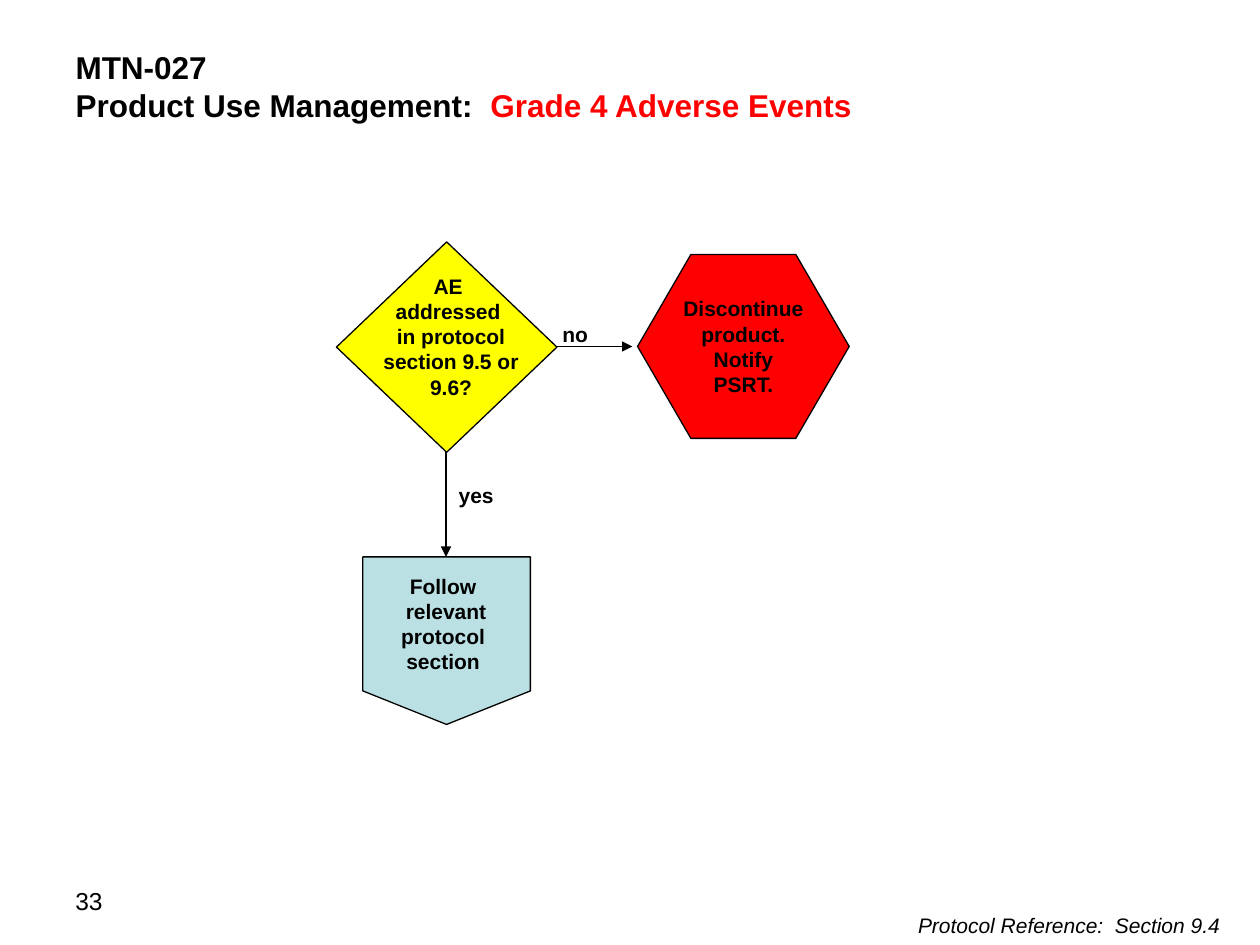
from dataclasses import dataclass

from lxml import etree
from pptx import Presentation
from pptx import util as u
from pptx.dml.color import RGBColor
from pptx.enum import shapes, text
from pptx.oxml import ns

PX = 9144  # EMU per px, 100 px to the inch
L, C, R = text.PP_ALIGN.LEFT, text.PP_ALIGN.CENTER, text.PP_ALIGN.RIGHT


@dataclass(frozen=True)
class Theme:
    font: str = "Arial"
    ink: str = "000000"
    alert: str = "FF0000"
    question: str = "FFFF00"
    follow: str = "BBE0E3"
    title: int = 18
    number: int = 14
    body: int = 12
    line: float = 0.75


T = Theme()


@dataclass(frozen=True)
class Box:
    x: int
    y: int
    w: int
    h: int

    def emu(self) -> tuple[int, int, int, int]:
        return self.x * PX, self.y * PX, self.w * PX, self.h * PX


@dataclass(frozen=True)
class Node:
    kind: shapes.MSO_SHAPE
    box: Box
    fill: str
    label_box: Box
    label: str
    adjust: float | None = None


@dataclass(frozen=True)
class Arrow:
    start: tuple[int, int]
    end: tuple[int, int]
    label_box: Box
    label: str
    align: text.PP_ALIGN
    inset: int = 10


def add_run(p, content: str, *, size: int = T.body, bold: bool = False,
            italic: bool = False, color: str = T.ink) -> None:
    r = p.add_run()
    r.text = content
    f = r.font
    f.name, f.size, f.bold, f.italic = T.font, u.Pt(size), bold, italic
    f.color.rgb = RGBColor.from_string(color)


def write(sp, content: str, *, align: text.PP_ALIGN = L, inset: int = 10, **style) -> None:
    """Fill a shape with one paragraph per line of content."""
    tf = sp.text_frame
    tf.word_wrap = True
    tf.auto_size = text.MSO_AUTO_SIZE.NONE
    tf.vertical_anchor = text.MSO_ANCHOR.TOP
    tf.margin_left = inset * PX
    for i, line in enumerate(content.split("\n")):
        p = tf.add_paragraph() if i else tf.paragraphs[0]
        p.alignment = align
        p.space_before = u.Pt(0)
        add_run(p, line, **style)


def add_label(s, box: Box, content: str, **style) -> None:
    write(s.shapes.add_textbox(*box.emu()), content, **style)


def set_line(sp) -> None:
    sp.line.color.rgb = RGBColor.from_string(T.ink)
    sp.line.width = u.Pt(T.line)


def add_node(s, node: Node) -> None:
    sp = s.shapes.add_shape(node.kind, *node.box.emu())
    sp.shadow.inherit = False
    sp.fill.solid()
    sp.fill.fore_color.rgb = RGBColor.from_string(node.fill)
    set_line(sp)
    if node.adjust is not None:
        sp.adjustments[0] = node.adjust
    add_label(s, node.label_box, node.label, align=C, bold=True)


def add_arrow(s, arrow: Arrow) -> None:
    ends = (v * PX for v in arrow.start + arrow.end)
    sp = s.shapes.add_connector(shapes.MSO_CONNECTOR.STRAIGHT, *ends)
    set_line(sp)
    etree.SubElement(sp.line._get_or_add_ln(), ns.qn("a:tailEnd"), type="triangle")
    etree.SubElement(sp._element.spPr, ns.qn("a:effectLst"))
    add_label(s, arrow.label_box, arrow.label, align=arrow.align,
              inset=arrow.inset, bold=True)


NODES = [
    Node(shapes.MSO_SHAPE.DIAMOND, Box(267, 192, 175, 167), T.question,
         Box(283, 212, 150, 131), "AE \naddressed \nin protocol section 9.5 or 9.6?"),
    Node(shapes.MSO_SHAPE.FLOWCHART_OFFPAGE_CONNECTOR, Box(288, 442, 133, 133), T.follow,
         Box(279, 450, 150, 91), "Follow \nrelevant protocol \nsection "),
    Node(shapes.MSO_SHAPE.HEXAGON, Box(506, 202, 168, 146), T.alert,
         Box(504, 230, 172, 91), "Discontinue\nproduct.\nNotify\nPSRT.", adjust=0.29),
]
ARROWS = [
    Arrow((442, 275), (502, 275), Box(408, 250, 97, 30), "no", C),
    Arrow((354, 358), (354, 442), Box(364, 378, 283, 30), "yes", L, inset=0),
]


def main() -> None:
    prs = Presentation()
    prs.slide_width, prs.slide_height = 1000 * PX, 750 * PX
    s = prs.slides.add_slide(prs.slide_layouts.get_by_name("Title Only"))

    # Title
    title = s.shapes.title
    title.left, title.top, title.width, title.height = Box(50, 33, 900, 71).emu()
    write(title, "MTN-027\nProduct Use Management:  ", size=T.title, bold=True)
    add_run(title.text_frame.paragraphs[-1], "Grade 4 Adverse Events",
            size=T.title, bold=True, color=T.alert)

    # Decision flow
    for node in NODES:
        add_node(s, node)
    for arrow in ARROWS:
        add_arrow(s, arrow)

    # Page number and reference
    add_label(s, Box(50, 698, 233, 52), "33", size=T.number)
    add_label(s, Box(608, 719, 375, 30), "Protocol Reference:  Section 9.4 ",
              align=R, italic=True)

    prs.save("out.pptx")


if __name__ == "__main__":
    main()
